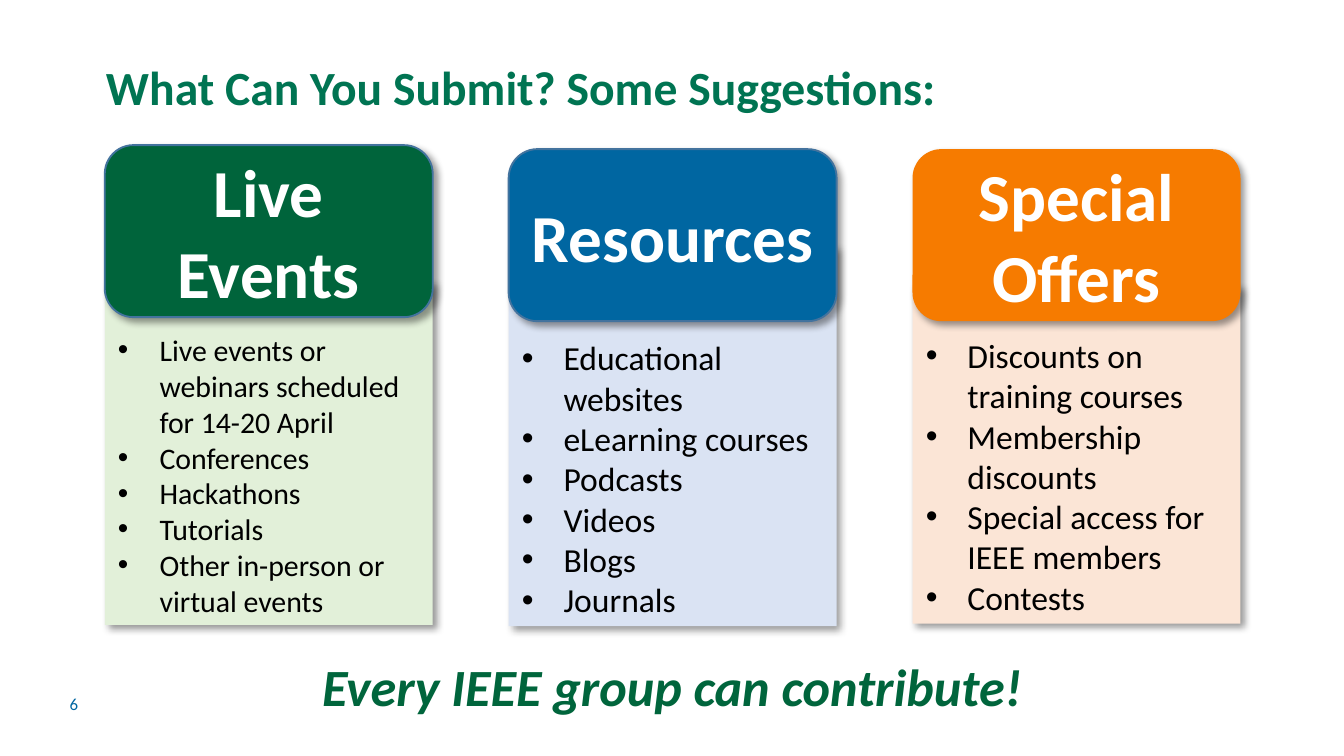
from pptx import Presentation
from pptx.dml.color import RGBColor
from pptx.enum.shapes import MSO_SHAPE
from pptx.enum.text import MSO_ANCHOR, PP_ALIGN
from pptx.oxml import parse_xml
from pptx.oxml.ns import nsdecls
from pptx.util import Inches, Pt

FONT = "Calibri"
BLACK = RGBColor(0x00, 0x00, 0x00)
WHITE = RGBColor(0xFF, 0xFF, 0xFF)
TITLE_GREEN = RGBColor(0x00, 0x74, 0x52)
CLOSING_GREEN = RGBColor(0x00, 0x65, 0x3C)
GREEN = RGBColor(0x00, 0x64, 0x3B)
BLUE = RGBColor(0x00, 0x66, 0xA1)
ORANGE = RGBColor(0xF6, 0x7B, 0x00)
PALE_GREEN = RGBColor(0xE2, 0xF0, 0xD9)
PALE_BLUE = RGBColor(0xDA, 0xE3, 0xF3)
PALE_ORANGE = RGBColor(0xFB, 0xE5, 0xD6)
OUTLINE = RGBColor(0x43, 0x73, 0x9E)

SLIDE_WIDTH = Inches(10)
SLIDE_HEIGHT = SLIDE_WIDTH * 9 // 16
FIRST_LEFT, LAST_LEFT, COLUMN_WIDTH = 0.78, 6.79, 2.44
HEADING_HEIGHT = 1.28
INDENT = Inches(0.31)

# heading, heading top, heading fill, outline, list top, list height, list fill, size, items
COLUMNS = [
    ("Live Events", 1.08, GREEN, OUTLINE, 2.09, 2.56, PALE_GREEN, 16,
     ["Live events or webinars scheduled for 14-20 April", "Conferences",
      "Hackathons", "Tutorials", "Other in-person or virtual events"]),
    ("Resources", 1.11, BLUE, OUTLINE, 1.83, 2.83, PALE_BLUE, 18,
     ["Educational websites", "eLearning courses", "Podcasts", "Videos",
      "Blogs", "Journals"]),
    ("Special Offers", 1.11, ORANGE, None, 2.12, 2.52, PALE_ORANGE, 18,
     ["Discounts on training courses", "Membership discounts",
      "Special access for IEEE members", "Contests"]),
]


def style(paragraph, size, color, bold=None, italic=None):
    font = paragraph.font
    font.name, font.size, font.bold, font.italic = FONT, Pt(size), bold, italic
    font.color.rgb = color


def add_label(slide, text, box, size, color, anchor=MSO_ANCHOR.TOP,
              align=PP_ALIGN.LEFT, bold=None, italic=None):
    label = slide.shapes.add_textbox(*map(Inches, box))
    frame = label.text_frame
    frame.word_wrap = True
    frame.vertical_anchor = anchor
    paragraph = frame.paragraphs[0]
    paragraph.text = text
    paragraph.alignment = align
    style(paragraph, size, color, bold, italic)
    return paragraph


def add_shadow(shape):
    """Give the shape a soft shadow falling to the lower right."""
    shape.shadow.inherit = False
    effects = shape._element.spPr.find("{*}effectLst")
    effects.append(parse_xml(
        f'<a:outerShdw {nsdecls("a")} blurRad="{Pt(4)}" dist="{Pt(3)}" '
        'dir="2700000" algn="tl" rotWithShape="0"><a:srgbClr val="000000">'
        '<a:alpha val="40000"/></a:srgbClr></a:outerShdw>'))


def add_panel(slide, preset, box, fill, outline=None):
    panel = slide.shapes.add_shape(preset, *map(Inches, box))
    panel.fill.solid()
    panel.fill.fore_color.rgb = fill
    if outline is None:
        panel.line.fill.background()
    else:
        panel.line.color.rgb = outline
        panel.line.width = Pt(1)
    add_shadow(panel)
    panel.text_frame.word_wrap = True
    return panel


def make_bullet(paragraph):
    properties = paragraph._p.get_or_add_pPr()
    properties.set("marL", str(INDENT))
    properties.set("indent", str(-INDENT))
    properties.append(parse_xml(f'<a:buFont {nsdecls("a")} typeface="Arial"/>'))
    properties.append(parse_xml(f'<a:buChar {nsdecls("a")} char="•"/>'))


def add_list(slide, box, fill, size, items):
    frame = add_panel(slide, MSO_SHAPE.RECTANGLE, box, fill).text_frame
    frame.vertical_anchor = MSO_ANCHOR.BOTTOM
    for index, item in enumerate(items):
        paragraph = frame.add_paragraph() if index else frame.paragraphs[0]
        paragraph.text = item
        paragraph.alignment = PP_ALIGN.LEFT
        make_bullet(paragraph)
        style(paragraph, size, BLACK)


def add_heading(slide, text, box, fill, outline):
    frame = add_panel(slide, MSO_SHAPE.ROUNDED_RECTANGLE, box, fill, outline).text_frame
    frame.vertical_anchor = MSO_ANCHOR.MIDDLE
    paragraph = frame.paragraphs[0]
    paragraph.text = text
    paragraph.alignment = PP_ALIGN.CENTER
    style(paragraph, 36, WHITE, bold=True)


def main():
    presentation = Presentation()
    presentation.slide_width = SLIDE_WIDTH
    presentation.slide_height = SLIDE_HEIGHT
    slide = presentation.slides.add_slide(presentation.slide_layouts[6])

    title = add_label(slide, "What Can You Submit? Some Suggestions:",
                      (0.69, 0.46, 8.62, 0.45), 25.5, TITLE_GREEN,
                      MSO_ANCHOR.BOTTOM, bold=True)
    title.line_spacing = 0.9
    add_label(slide, "6", (0.42, 5.09, 0.53, 0.3), 9, BLUE, MSO_ANCHOR.MIDDLE)

    column_step = (LAST_LEFT - FIRST_LEFT) / (len(COLUMNS) - 1)
    lefts = [FIRST_LEFT + index * column_step for index in range(len(COLUMNS))]
    for left, column in zip(lefts, COLUMNS):
        (_, _, _, _, list_top, list_height, list_fill, size, items) = column
        add_list(slide, (left, list_top, COLUMN_WIDTH, list_height),
                 list_fill, size, items)
    for left, (heading, top, fill, outline, *_) in zip(lefts, COLUMNS):
        add_heading(slide, heading, (left, top, COLUMN_WIDTH, HEADING_HEIGHT),
                    fill, outline)

    add_label(slide, "Every IEEE group can contribute!", (1.61, 4.82, 6.78, 0.57),
              28, CLOSING_GREEN, align=PP_ALIGN.CENTER, bold=True, italic=True)
    presentation.save("out.pptx")


if __name__ == "__main__":
    main()
